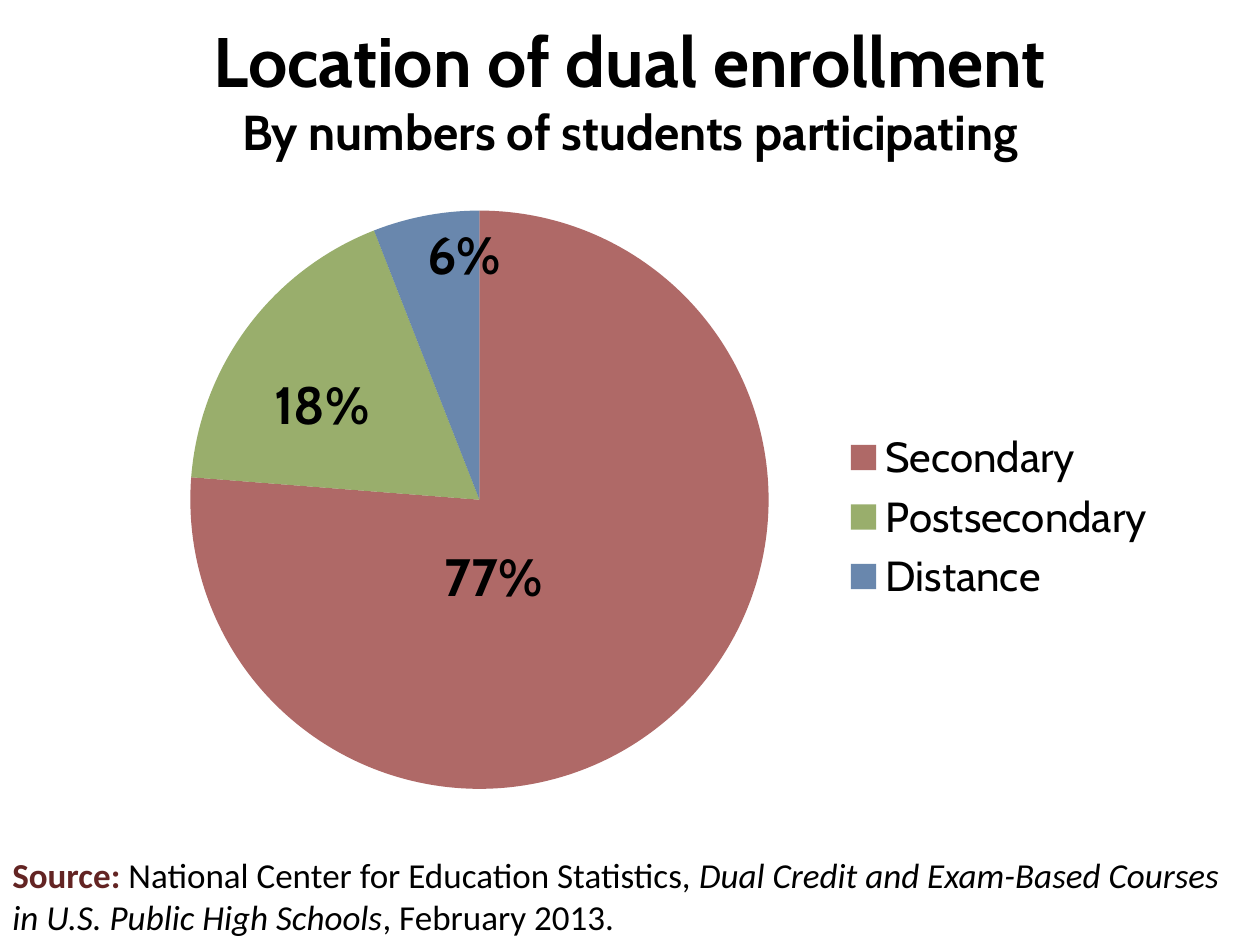
import copy
from dataclasses import dataclass

import pptx
import pptx.chart.data
import pptx.dml.color
import pptx.enum.chart
import pptx.enum.text
import pptx.oxml
import pptx.oxml.ns
import pptx.util
from pptx.util import Cm

COLORS = {
    "text": "000000",
    "source": "632423",
    "red": "953735",
    "green": "77933C",
    "blue": "376092",
}
OPACITY = 75000
PERCENT_FORMAT = '0"%"'


@dataclass
class Slice:
    name: str
    value: int
    color: str
    label_shift: tuple[float, float] | None = None


@dataclass
class Span:
    text: str
    color: str = "text"
    bold: bool = False
    italic: bool = False


SLICES = [
    Slice("Secondary", 77, "red", (-0.12, -0.14)),
    Slice("Postsecondary", 18, "green", (0.02, 0.06)),
    Slice("Distance", 6, "blue"),
]
SOURCE = [
    Span("Source: ", "source", bold=True),
    Span("National Center for Education Statistics, "),
    Span("Dual Credit and Exam-Based Courses in U.S. Public High Schools", italic=True),
    Span(", February 2013."),
]


def style_font(font, name: str, size: float, color: str = "text",
               bold: bool = False, italic: bool = False) -> None:
    font.name = name
    font.size = pptx.util.Pt(size)
    font.bold = bold
    font.italic = italic
    font.color.rgb = pptx.dml.color.RGBColor.from_string(COLORS[color])


def make_layout(**values: float | str):
    """Return a manual chart layout, in fractions of the chart size."""
    items = "".join(f'<c:{key} val="{value}"/>' for key, value in values.items())
    return pptx.oxml.parse_xml(
        f'<c:layout {pptx.oxml.ns.nsdecls("c")}>'
        f"<c:manualLayout>{items}</c:manualLayout></c:layout>")


def add_title(page) -> None:
    title = page.shapes.title
    title.left, title.top, title.width, title.height = Cm(0), Cm(0.2), Cm(25.4), Cm(3.18)
    frame = title.text_frame
    frame.text = "Location of dual enrollment\vBy numbers of students participating"
    frame.vertical_anchor = pptx.enum.text.MSO_ANCHOR.MIDDLE
    para = frame.paragraphs[0]
    para.alignment = pptx.enum.text.PP_ALIGN.CENTER
    for span, size in zip(para.runs, (40, 28)):
        style_font(span.font, "Cabin", size, bold=True)


def style_slice(point, piece: Slice, number_format) -> None:
    fill = point.format.fill
    fill.solid()
    fill.fore_color.rgb = pptx.dml.color.RGBColor.from_string(COLORS[piece.color])
    color = point.format.element if hasattr(point.format, "element") else fill._xPr
    for tag in color.iter(pptx.oxml.ns.qn("a:srgbClr")):
        alpha = tag.makeelement(pptx.oxml.ns.qn("a:alpha"), {"val": str(OPACITY)})
        tag.append(alpha)
    point.format.line.fill.background()
    if piece.label_shift:
        label = point.data_label
        style_font(label.font, "Cabin", 30, bold=True)
        label.position = pptx.enum.chart.XL_LABEL_POSITION.INSIDE_END
        x, y = piece.label_shift
        index = label.font._element.xpath("ancestor::c:dLbl/c:idx")[0]
        index.addnext(copy.deepcopy(number_format))
        index.addnext(make_layout(x=x, y=y))


def add_pie(page) -> None:
    data = pptx.chart.data.CategoryChartData(number_format=PERCENT_FORMAT)
    data.categories = [piece.name for piece in SLICES]
    data.add_series("Series 1", [piece.value for piece in SLICES])
    chart = page.shapes.add_chart(
        pptx.enum.chart.XL_CHART_TYPE.PIE,
        Cm(2.11), Cm(3.23), Cm(21.59), Cm(13.97), data).chart
    chart.has_title = False
    style_font(chart.font, "Cabin", 25, bold=True)

    plot = chart.plots[0]
    plot.vary_by_categories = True
    plot.has_data_labels = True
    labels = plot.data_labels
    labels.number_format = PERCENT_FORMAT
    labels.number_format_is_linked = False
    labels.show_value = True
    labels.show_percentage = False
    labels.position = pptx.enum.chart.XL_LABEL_POSITION.INSIDE_END
    style_font(labels.font, "Cabin", 30, bold=True)
    # Labels on the series carry the single-slice settings as well.
    series = plot.series[0]
    series_labels = series.data_labels
    series_labels.number_format = PERCENT_FORMAT
    series_labels.number_format_is_linked = False
    series_labels.show_value = True
    series_labels.show_percentage = False
    series_labels.position = pptx.enum.chart.XL_LABEL_POSITION.INSIDE_END
    style_font(series_labels.font, "Cabin", 30, bold=True)
    number_format = series_labels._element.find(pptx.oxml.ns.qn("c:numFmt"))
    for index, piece in enumerate(SLICES):
        style_slice(series.points[index], piece, number_format)

    chart.has_legend = True
    legend = chart.legend
    legend.position = pptx.enum.chart.XL_LEGEND_POSITION.RIGHT
    legend.include_in_layout = False
    style_font(legend.font, "Cabin", 24)
    for old in chart._chartSpace.xpath("//c:legend/c:layout | //c:plotArea/c:layout"):
        old.getparent().remove(old)
    legend._element.find(pptx.oxml.ns.qn("c:legendPos")).addnext(
        make_layout(xMode="edge", yMode="edge", x=0.69, y=0.38, w=0.29, h=0.27))
    chart._chartSpace.xpath("//c:plotArea")[0].insert(0, make_layout(
        layoutTarget="inner", xMode="edge", yMode="edge", x=0.08, y=0.07, w=0.54, h=0.84))


def add_source(page) -> None:
    box = page.shapes.add_textbox(Cm(0), Cm(17.09), Cm(25.4), Cm(1.96))
    box.text_frame.word_wrap = True
    para = box.text_frame.paragraphs[0]
    for part in SOURCE:
        span = para.add_run()
        span.text = part.text
        style_font(span.font, "Calibri", 20, part.color, part.bold, part.italic)


def main() -> None:
    deck = pptx.Presentation()
    deck.slide_width, deck.slide_height = Cm(25.4), Cm(19.05)
    page = deck.slides.add_slide(deck.slide_layouts[5])
    add_title(page)
    add_pie(page)
    add_source(page)
    deck.save("out.pptx")


if __name__ == "__main__":
    main()
